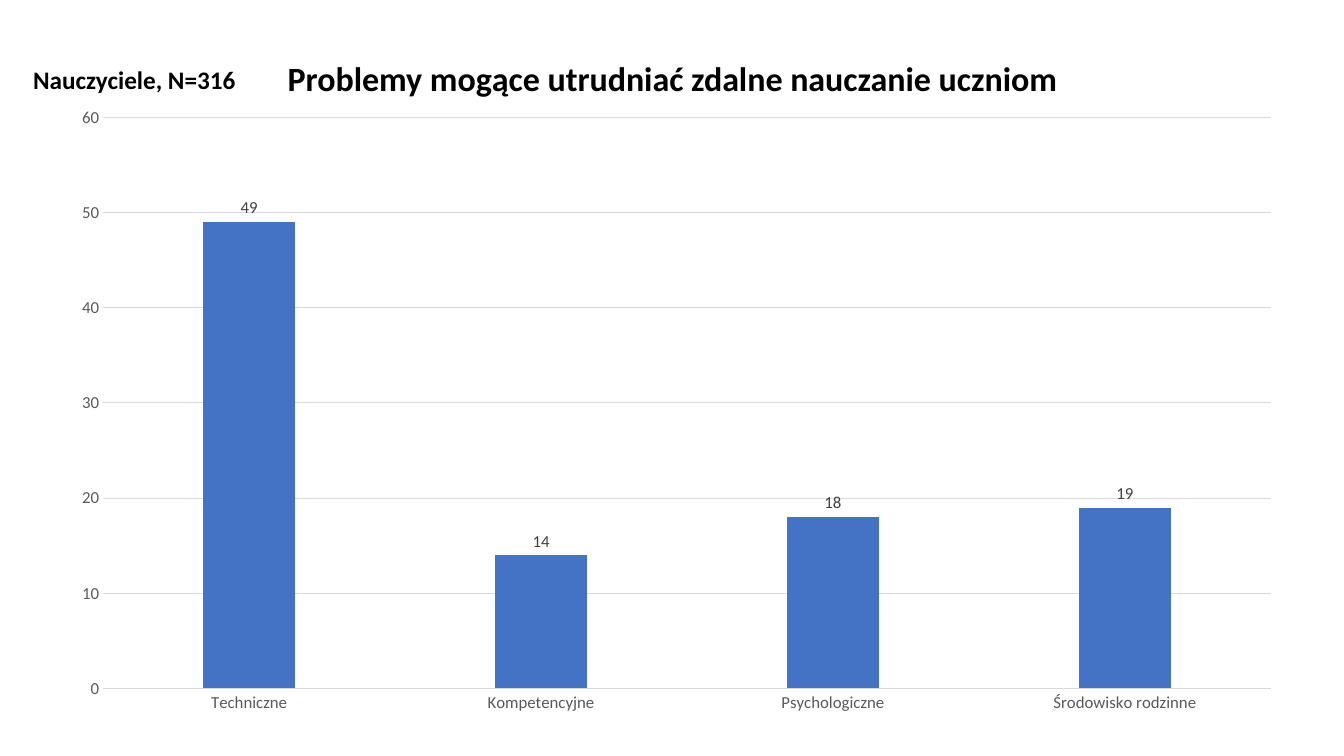
import dataclasses

import pptx
import pptx.chart.data
import pptx.dml.color
import pptx.enum.chart
import pptx.enum.text
import pptx.util

COLUMNS = 40
ROWS = 20


@dataclasses.dataclass(frozen=True)
class Theme:
    font: str = "Calibri"
    ink: str = "000000"
    axis_text: str = "595959"
    label_text: str = "404040"
    rule: str = "D9D9D9"
    bar: str = "4472C4"
    title_size: float = 24.3
    sample_size: float = 18
    chart_size: float = 12
    rule_width: float = 0.75


THEME = Theme()


def color(value):
    return pptx.dml.color.RGBColor.from_string(value)


def grid_box(presentation, left, top, width, height):
    column = presentation.slide_width / COLUMNS
    row = presentation.slide_height / ROWS
    return round(left * column), round(top * row), round(width * column), round(height * row)


def format_font(font, size, ink, bold=False):
    font.name = THEME.font
    font.size = pptx.util.Pt(size)
    font.color.rgb = color(ink)
    font.bold = bold


def format_rule(line):
    line.color.rgb = color(THEME.rule)
    line.width = pptx.util.Pt(THEME.rule_width)


def write_text(shape, text, size, ink=THEME.ink, bold=True, align=None, anchor=None, spacing=None):
    frame = shape.text_frame
    frame.word_wrap = True
    frame.vertical_anchor = anchor
    paragraph = frame.paragraphs[0]
    paragraph.alignment = align
    paragraph.line_spacing = spacing
    run = paragraph.add_run()
    run.text = text
    format_font(run.font, size, ink, bold)
    return frame


def place_title(slide, box):
    title = slide.shapes.title
    title.left, title.top, title.width, title.height = box
    frame = write_text(
        title,
        "Problemy mogące utrudniać zdalne nauczanie uczniom",
        THEME.title_size,
        align=pptx.enum.text.PP_ALIGN.CENTER,
        anchor=pptx.enum.text.MSO_ANCHOR.MIDDLE,
        spacing=0.9,
    )
    frame.auto_size = pptx.enum.text.MSO_AUTO_SIZE.NONE
    frame.margin_top = pptx.util.Inches(0.15)
    frame.margin_bottom = pptx.util.Inches(0.03)


def place_sample_note(slide, box):
    note = slide.shapes.add_textbox(*box)
    frame = write_text(note, "Nauczyciele, N=316", THEME.sample_size)
    frame.auto_size = pptx.enum.text.MSO_AUTO_SIZE.SHAPE_TO_FIT_TEXT


def place_problem_chart(slide, box):
    data = pptx.chart.data.CategoryChartData()
    data.categories = ["Techniczne", "Kompetencyjne", "Psychologiczne", "Środowisko rodzinne"]
    data.add_series("Series 1", [49, 14, 18, 19])
    chart_type = pptx.enum.chart.XL_CHART_TYPE.COLUMN_CLUSTERED
    chart = slide.shapes.add_chart(chart_type, *box, data).chart
    chart.has_title = False
    chart.has_legend = False
    format_font(chart.font, THEME.chart_size, THEME.axis_text)

    for axis in (chart.category_axis, chart.value_axis):
        axis.major_tick_mark = pptx.enum.chart.XL_TICK_MARK.NONE
        axis.minor_tick_mark = pptx.enum.chart.XL_TICK_MARK.NONE
        format_font(axis.tick_labels.font, THEME.chart_size, THEME.axis_text)
    format_rule(chart.category_axis.format.line)
    chart.value_axis.format.line.fill.background()
    chart.value_axis.minimum_scale = 0
    chart.value_axis.maximum_scale = 60
    chart.value_axis.major_unit = 10
    format_rule(chart.value_axis.major_gridlines.format.line)

    plot = chart.plots[0]
    plot.gap_width = 219
    plot.overlap = -27
    plot.vary_by_categories = False
    series = plot.series[0]
    series.format.fill.solid()
    series.format.fill.fore_color.rgb = color(THEME.bar)
    labels = series.data_labels
    labels.show_value = True
    labels.position = pptx.enum.chart.XL_LABEL_POSITION.OUTSIDE_END
    format_font(labels.font, THEME.chart_size, THEME.label_text)


def build_chart_slide(presentation):
    slide = presentation.slides.add_slide(presentation.slide_layouts[5])
    place_problem_chart(slide, grid_box(presentation, 1.71, 2.51, 36.85, 16.67))
    place_sample_note(slide, grid_box(presentation, 0.69, 1.57, 22.06, 1.07))
    place_title(slide, grid_box(presentation, 2.76, 1.07, 34.51, 1.81))


def main():
    presentation = pptx.Presentation()
    presentation.slide_width = pptx.util.Inches(13.33)
    presentation.slide_height = pptx.util.Inches(7.5)
    build_chart_slide(presentation)
    presentation.save("out.pptx")


if __name__ == "__main__":
    main()
